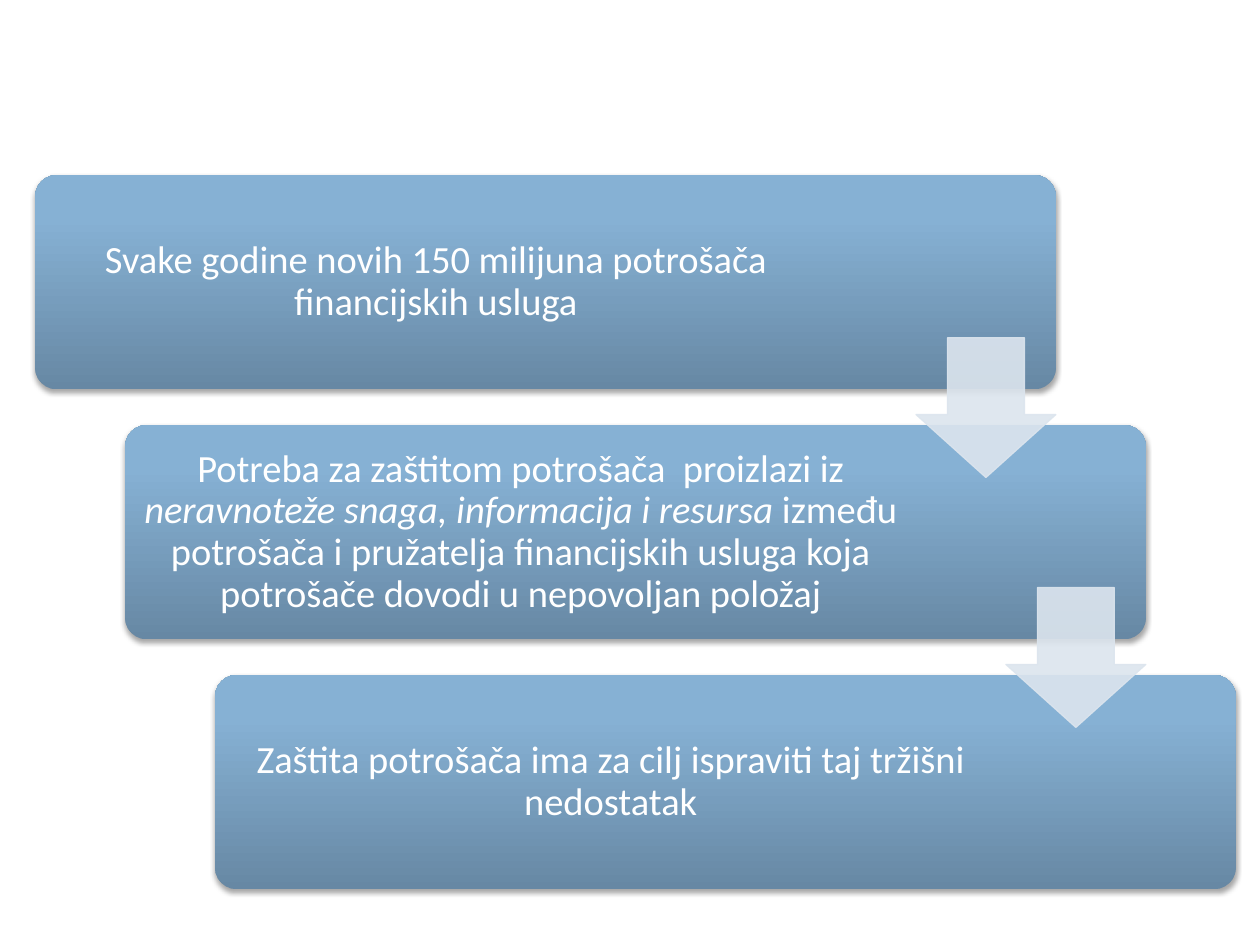
from typing import NamedTuple

from lxml.etree import SubElement
from pptx import Presentation
from pptx.dml.color import RGBColor
from pptx.enum.shapes import MSO_SHAPE as Preset
from pptx.enum.text import MSO_ANCHOR as Anchor, PP_ALIGN as Align
from pptx.oxml.ns import qn
from pptx.util import Inches, Pt

WHITE = RGBColor(0xFF, 0xFF, 0xFF)
ARROW_TINT = RGBColor(0xDC, 0xE5, 0xEE)
SHADOW_TINT = RGBColor(0x00, 0x00, 0x00)
BOX_GRADIENT = (
    (0, RGBColor(0x67, 0x88, 0xA4)),
    (80, RGBColor(0x86, 0xB1, 0xD4)),
    (100, RGBColor(0x86, 0xB2, 0xD7)),
)

SLIDE_W, SLIDE_H = Inches(10), Inches(7.5)
FIRST_LEFT, FIRST_TOP = 0.028 * SLIDE_W, 0.1853 * SLIDE_H
STEP_RIGHT, STEP_DOWN = 0.0714 * SLIDE_W, 0.2645 * SLIDE_H
BOX_W, BOX_H = 0.81 * SLIDE_W, 0.2267 * SLIDE_H
ARROW_SIZE = 0.111 * SLIDE_W
ARROW_DROP = 0.172 * SLIDE_H
INSET = Inches(0.09)


class Phrase(NamedTuple):
    wording: str
    italic: bool = False


class Step(NamedTuple):
    phrases: tuple[Phrase, ...]
    text_share: float = 0.775


STEPS = (
    Step((Phrase("Svake godine novih 150 milijuna potrošača financijskih usluga"),), 0.785),
    Step((
        Phrase("Potreba za zaštitom potrošača  proizlazi iz "),
        Phrase("neravnoteže snaga, informacija i resursa ", italic=True),
        Phrase("između potrošača i pružatelja financijskih usluga koja "
               "potrošače dovodi u nepovoljan položaj"),
    )),
    Step((Phrase("Zaštita potrošača ima za cilj ispraviti taj tržišni nedostatak"),)),
)


def add_color(parent, color: RGBColor, opacity: int = 100) -> None:
    tint = SubElement(parent, qn("a:srgbClr"), val=str(color))
    if opacity < 100:
        SubElement(tint, qn("a:alpha"), val=str(opacity * 1000))


def step_origin(row: int) -> tuple[int, int]:
    return int(FIRST_LEFT + row * STEP_RIGHT), int(FIRST_TOP + row * STEP_DOWN)


def draw_box(slide, row: int) -> None:
    box = slide.shapes.add_shape(
        Preset.ROUNDED_RECTANGLE, *step_origin(row), int(BOX_W), int(BOX_H))
    box.adjustments[0] = 0.1
    box.line.fill.background()
    box.fill.gradient()
    box.fill.gradient_angle = 90
    properties = box._element.spPr
    stops = properties.find(".//" + qn("a:gsLst"))
    for stop in list(stops):
        stops.remove(stop)
    for share, color in BOX_GRADIENT:
        add_color(SubElement(stops, qn("a:gs"), pos=str(share * 1000)), color)
    box.shadow.inherit = False
    shadow = SubElement(
        properties.find(qn("a:effectLst")), qn("a:outerShdw"),
        blurRad=str(Pt(3.1)), dist=str(Pt(1.8)), dir="5400000", rotWithShape="0")
    add_color(shadow, SHADOW_TINT, 35)


def draw_text(slide, row: int, step: Step) -> None:
    label = slide.shapes.add_textbox(
        *step_origin(row), int(BOX_W * step.text_share), int(BOX_H))
    frame = label.text_frame
    frame.word_wrap = True
    frame.vertical_anchor = Anchor.MIDDLE
    frame.margin_left = frame.margin_right = INSET
    frame.margin_top = frame.margin_bottom = INSET
    paragraph = frame.paragraphs[0]
    paragraph.alignment = Align.CENTER
    paragraph.line_spacing = 0.9
    paragraph.font.size = Pt(22)
    paragraph.font.name = "Calibri"
    paragraph.font.color.rgb = WHITE
    for phrase in step.phrases:
        run = paragraph.add_run()
        run.text = phrase.wording
        if phrase.italic:
            run.font.italic = True


def draw_arrow(slide, row: int) -> None:
    left, top = step_origin(row)
    arrow = slide.shapes.add_shape(
        Preset.DOWN_ARROW, int(left + BOX_W - ARROW_SIZE), int(top + ARROW_DROP),
        int(ARROW_SIZE), int(ARROW_SIZE))
    arrow.adjustments[0] = 0.55
    arrow.adjustments[1] = 0.45
    arrow.shadow.inherit = False
    arrow.line.width = Pt(0.75)
    for fill in (arrow.fill, arrow.line.fill):
        fill.solid()
        fill.fore_color.rgb = ARROW_TINT
    for tint in arrow._element.spPr.iter(qn("a:srgbClr")):
        SubElement(tint, qn("a:alpha"), val="90000")


def main() -> None:
    deck = Presentation()
    deck.slide_width, deck.slide_height = SLIDE_W, SLIDE_H
    slide = deck.slides.add_slide(deck.slide_layouts[6])
    for row, step in enumerate(STEPS):
        draw_box(slide, row)
        draw_text(slide, row, step)
    for row in range(len(STEPS) - 1):
        draw_arrow(slide, row)
    deck.save("out.pptx")


if __name__ == "__main__":
    main()
